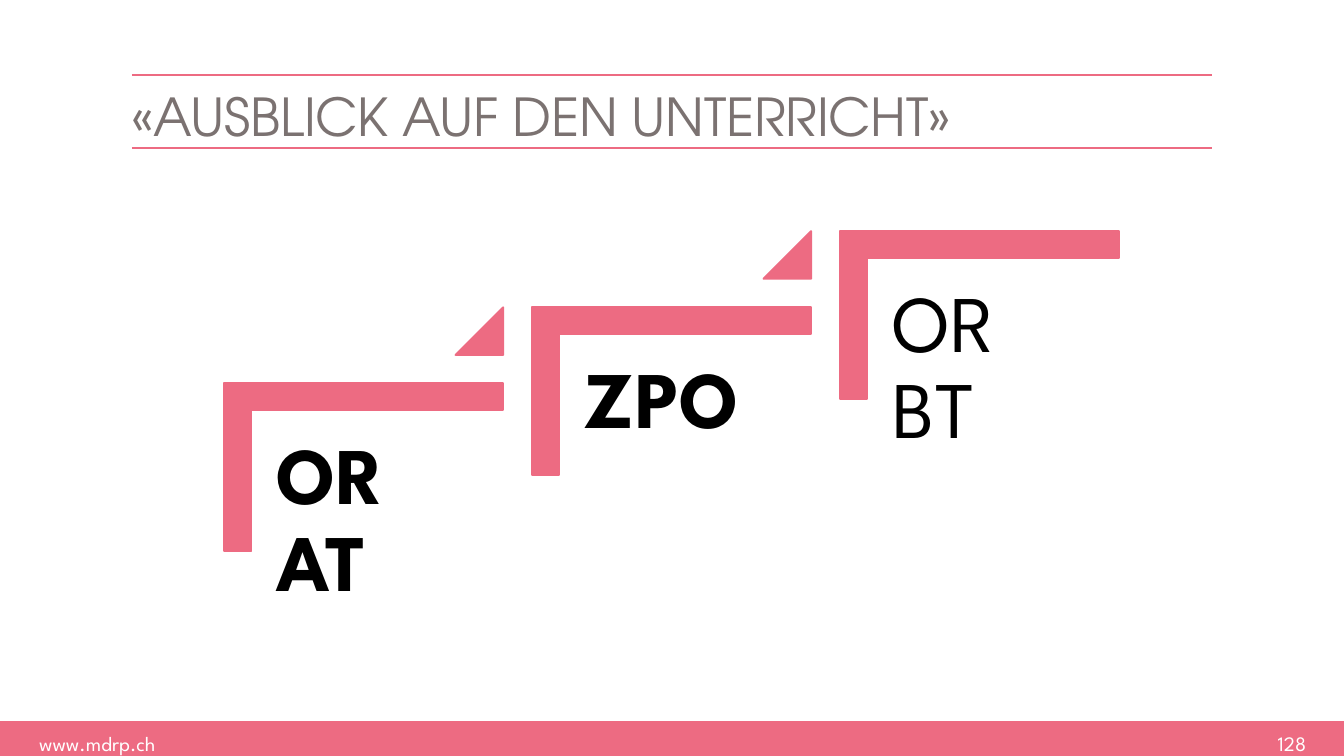
from pptx import Presentation
from pptx.dml.color import RGBColor
from pptx.enum.shapes import MSO_CONNECTOR, MSO_SHAPE
from pptx.enum.text import MSO_ANCHOR, MSO_AUTO_SIZE, PP_ALIGN
from pptx.oxml.ns import qn
from pptx.util import Cm, Pt
from lxml import etree

TOP, NONE = MSO_ANCHOR.TOP, MSO_AUTO_SIZE.NONE
LEFT, RIGHT = PP_ALIGN.LEFT, PP_ALIGN.RIGHT
RECTANGLE, CORNER, TRIANGLE = (
    MSO_SHAPE.RECTANGLE, MSO_SHAPE.CORNER, MSO_SHAPE.ISOSCELES_TRIANGLE)

TITLE = "«AUSBLICK AUF DEN UNTERRICHT»"
STEPS = [("OR AT", True), ("ZPO", True), ("OR BT", False)]
WEBSITE, PAGE = "www.mdrp.ch", "128"

PINK, GREY, BLACK, WHITE = "ED6B82", "7B7271", "000000", "FFFFFF"
TITLE_FONT, BODY_FONT = "TeX Gyre Adventor", "League Spartan"

# All lengths in centimetres
SLIDE_W, SLIDE_H = 25.4, 14.29
MARGIN, RULES = 2.49, (1.42, 2.8)
FOOTER_TOP = 13.63
STEP_RIGHT, STEP_UP = 5.82, 1.44
CORNER_BOX = (5.28, 6.2, 3.18, 5.26)
LABEL_BOX = (4.77, 7.77, 4.75, 4.17)
TRIANGLE_BOX = (8.61, 5.81, 0.9, 0.9)


def color(value):
    return RGBColor.from_string(value)


def add_figure(kind, box, adjustments=(), outlined=True):
    figure = slide.shapes.add_shape(kind, *map(Cm, box))
    figure.shadow.inherit = False
    figure.fill.solid()
    figure.fill.fore_color.rgb = color(PINK)
    if outlined:
        figure.line.color.rgb = color(PINK)
        figure.line.width = Pt(1)
    else:
        figure.line.fill.background()
    for index, value in enumerate(adjustments):
        figure.adjustments[index] = value
    return figure


def add_rule(y):
    rule = slide.shapes.add_connector(
        MSO_CONNECTOR.STRAIGHT, Cm(MARGIN), Cm(y), Cm(SLIDE_W - MARGIN), Cm(y))
    rule.line.color.rgb = color(PINK)
    rule.line.width = Pt(1)
    etree.SubElement(rule.element.spPr, qn("a:effectLst"))


def write(shape, text, font, size, ink, bold=False, align=LEFT, inset=0, right_inset=0):
    frame = shape.text_frame
    frame.word_wrap = True
    frame.auto_size = NONE
    frame.vertical_anchor = TOP
    frame.margin_left = frame.margin_top = frame.margin_bottom = Cm(inset)
    frame.margin_right = Cm(right_inset)
    paragraph = frame.paragraphs[0]
    paragraph.alignment = align
    run = paragraph.add_run()
    run.text = text
    run.font.name, run.font.size, run.font.bold = font, Pt(size), bold
    run.font.color.rgb = color(ink)
    return paragraph


def add_text(box, *args, **options):
    return write(slide.shapes.add_textbox(*map(Cm, box)), *args, **options)


def climb(box, level):
    left, top, width, height = box
    return left + level * STEP_RIGHT, top - level * STEP_UP, width, height


deck = Presentation()
deck.slide_width, deck.slide_height = Cm(SLIDE_W), Cm(SLIDE_H)
slide = deck.slides.add_slide(deck.slide_layouts[5])

add_figure(RECTANGLE, (0, FOOTER_TOP, SLIDE_W, SLIDE_H - FOOTER_TOP), outlined=False)
add_text((0.74, 13.82, 2.6, 0.47), WEBSITE, BODY_FONT, 11, WHITE)
add_text((23.14, 13.82, 1.55, 0.36), PAGE, BODY_FONT, 11, WHITE, align=RIGHT)

for y in RULES:
    add_rule(y)

title = slide.shapes.title
title.left, title.top = Cm(MARGIN), Cm(RULES[0])
title.width, title.height = Cm(SLIDE_W - 2 * MARGIN), Cm(1.32)
heading = write(title, TITLE, TITLE_FONT, 28, GREY)
heading.line_spacing = 1.14
heading.runs[0].font._element.set("spc", "-10")

for level, (subject, bold) in enumerate(STEPS):
    add_figure(CORNER, climb(CORNER_BOX, level), (0.161, 0.161)).rotation = 90
    label = add_text(climb(LABEL_BOX, level), subject, BODY_FONT, 43, BLACK,
                     bold=bold, inset=0.46, right_inset=0.6)
    label.line_spacing = 0.9
    label.space_after = Pt(15)
    if level < len(STEPS) - 1:
        add_figure(TRIANGLE, climb(TRIANGLE_BOX, level), (1,))

deck.save("out.pptx")
